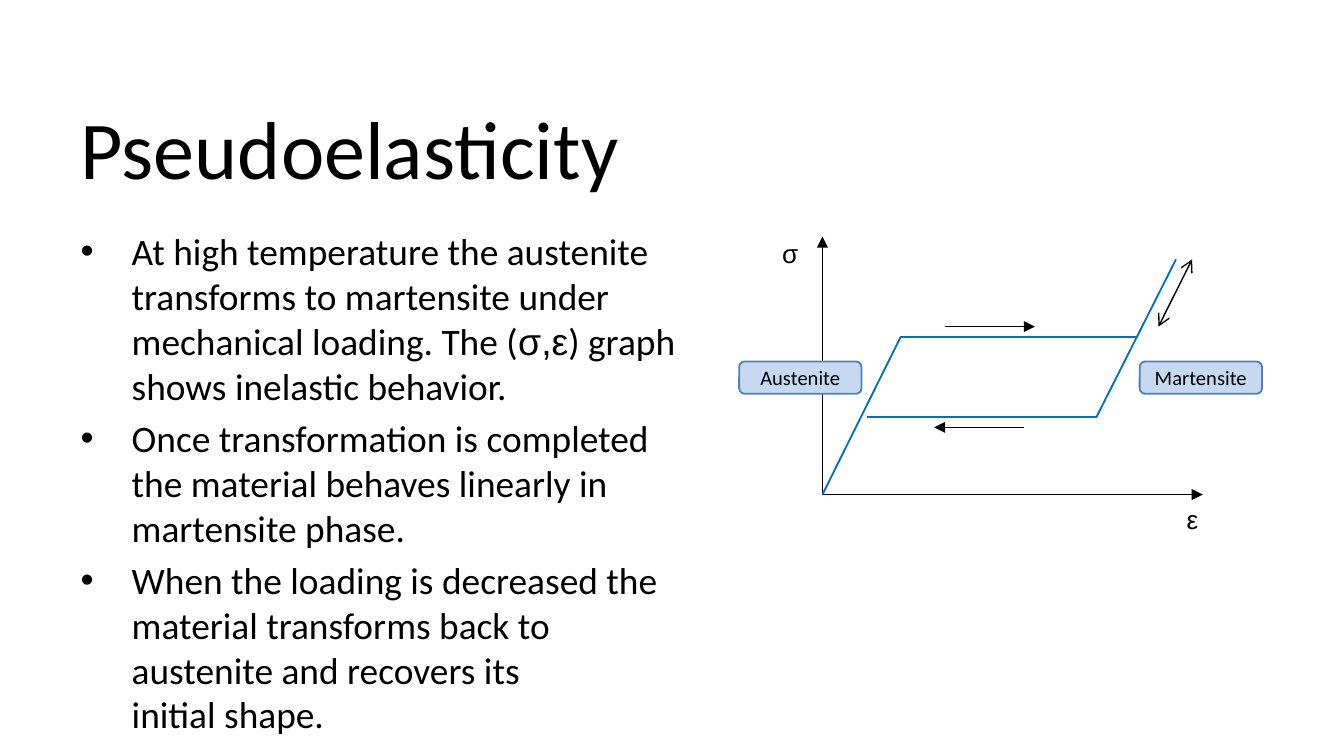
from dataclasses import dataclass

from lxml import etree
from pptx import Presentation
from pptx.dml.color import RGBColor
from pptx.enum.shapes import MSO_CONNECTOR, MSO_SHAPE
from pptx.enum.text import MSO_ANCHOR, MSO_AUTO_SIZE, PP_ALIGN
from pptx.oxml.ns import qn
from pptx.util import Inches, Pt

STRAIGHT = MSO_CONNECTOR.STRAIGHT
ROUNDED = MSO_SHAPE.ROUNDED_RECTANGLE
TOP, MIDDLE = MSO_ANCHOR.TOP, MSO_ANCHOR.MIDDLE
LEFT, CENTER = PP_ALIGN.LEFT, PP_ALIGN.CENTER
NO_AUTOFIT = MSO_AUTO_SIZE.NONE


@dataclass(frozen=True)
class Theme:
    ink: RGBColor = RGBColor(0x00, 0x00, 0x00)
    curve: RGBColor = RGBColor(0x00, 0x70, 0xC0)
    phase_fill: RGBColor = RGBColor(0xC6, 0xD9, 0xF1)
    phase_line: RGBColor = RGBColor(0x4F, 0x81, 0xBD)
    font: str = "Calibri"
    symbol_font: str = "Arial"
    title_size: float = 44
    body_size: float = 20
    symbol_size: float = 14
    phase_size: float = 11
    thin: float = 0.75
    medium: float = 1


def add_text(paragraph, text, *, size, color, font, align=LEFT):
    paragraph.alignment = align
    run = paragraph.add_run()
    run.text = text
    run.font.size = Pt(size)
    run.font.name = font
    run.font.color.rgb = color


def set_bullet(paragraph, indent):
    """Give the paragraph a round bullet with a hanging indent."""
    properties = paragraph._p.get_or_add_pPr()
    properties.set("marL", str(indent))
    properties.set("indent", str(-indent))
    etree.SubElement(properties, qn("a:buFont")).set("typeface", "Arial")
    etree.SubElement(properties, qn("a:buChar")).set("char", "•")


class SlideBuilder:
    def __init__(self, slide, theme):
        self.slide = slide
        self.theme = theme

    def _prepare(self, shape, box, anchor):
        """Place a text-bearing shape and return its text frame."""
        shape.left, shape.top, shape.width, shape.height = map(Inches, box)
        frame = shape.text_frame
        frame.word_wrap = True
        frame.auto_size = NO_AUTOFIT
        frame.vertical_anchor = anchor
        return frame

    def title(self, text, box):
        frame = self._prepare(self.slide.shapes.title, box, MIDDLE)
        add_text(frame.paragraphs[0], text, size=self.theme.title_size,
                 color=self.theme.ink, font=self.theme.font)

    def bullets(self, items, box):
        """Each item is a list of (text, font) pairs; "\\v" breaks a line."""
        frame = self._prepare(self.slide.placeholders[1], box, TOP)
        for index, item in enumerate(items):
            paragraph = frame.add_paragraph() if index else frame.paragraphs[0]
            set_bullet(paragraph, Inches(0.38))
            paragraph.space_before = Pt(4 if index else 0)
            for text, font in item:
                for part, line in enumerate(text.split("\v")):
                    if part:
                        paragraph.add_line_break()
                    add_text(paragraph, line, size=self.theme.body_size,
                             color=self.theme.ink, font=font)

    def line(self, start, end, color, width, head=None, tail=None):
        """Draw a line; head is the arrowhead at start, tail the one at end."""
        connector = self.slide.shapes.add_connector(
            STRAIGHT, *map(Inches, (*start, *end)))
        connector.line.color.rgb = color
        connector.line.width = Pt(width)
        outline = connector.line._get_or_add_ln()
        for tag, kind in (("a:headEnd", head), ("a:tailEnd", tail)):
            if kind:
                etree.SubElement(outline, qn(tag)).set("type", kind)
        etree.SubElement(connector._element.spPr, qn("a:effectLst"))

    def arrow(self, start, end, head=None, tail="triangle"):
        self.line(start, end, self.theme.ink, self.theme.thin, head, tail)

    def curve(self, *points):
        for start, end in zip(points, points[1:]):
            self.line(start, end, self.theme.curve, self.theme.medium)

    def symbol(self, text, left, top):
        box = (left, top, 0.39, 0.34)
        frame = self._prepare(
            self.slide.shapes.add_textbox(*map(Inches, box)), box, TOP)
        add_text(frame.paragraphs[0], text, size=self.theme.symbol_size,
                 color=self.theme.ink, font=self.theme.symbol_font)

    def phase(self, text, left, top):
        box = (left, top, 0.91, 0.24)
        label = self.slide.shapes.add_shape(ROUNDED, *map(Inches, box))
        label.shadow.inherit = False
        label.fill.solid()
        label.fill.fore_color.rgb = self.theme.phase_fill
        label.line.color.rgb = self.theme.phase_line
        label.line.width = Pt(self.theme.medium)
        frame = self._prepare(label, box, MIDDLE)
        add_text(frame.paragraphs[0], text, size=self.theme.phase_size,
                 color=self.theme.ink, font=self.theme.font, align=CENTER)


def draw_stress_strain(builder):
    origin = (6.12, 3.68)
    upper, lower, peak = 2.51, 3.1, 1.93

    builder.arrow(origin, (origin[0], 1.76))
    builder.arrow(origin, (8.95, origin[1]))
    builder.curve(origin, (6.7, upper), (8.45, upper))
    builder.curve((8.75, peak), (8.16, lower), (6.45, lower))
    builder.symbol("σ", 5.72, 1.72)
    builder.symbol("ε", 8.73, 3.7)

    loading, unloading = upper - 0.08, lower + 0.08
    builder.arrow((7.03, loading), (7.7, loading))
    builder.arrow((7.62, unloading), (6.95, unloading))
    builder.arrow((8.62, loading), (8.87, peak), head="arrow", tail="arrow")
    for name, left in (("Martensite", 8.48), ("Austenite", 5.5)):
        builder.phase(name, left, 2.69)


def main():
    theme = Theme()
    presentation = Presentation()
    presentation.slide_width = Inches(10)
    presentation.slide_height = Inches(10 * 9 / 16)
    slide = presentation.slides.add_slide(presentation.slide_layouts[1])
    builder = SlideBuilder(slide, theme)

    builder.title("Pseudoelasticity", (0.5, 0.62, 9, 0.94))
    builder.bullets([
        [("At high temperature the austenite transforms to martensite under "
          "mechanical loading. The (", theme.font),
         ("σ,ε", theme.symbol_font),
         (") graph shows inelastic behavior.", theme.font)],
        [("Once transformation is completed the material behaves linearly "
          "in martensite phase.", theme.font)],
        [("When the loading is decreased the material transforms back to "
          "austenite and recovers its \vinitial shape.", theme.font)],
    ], (0.5, 1.65, 4.67, 3.42))
    draw_stress_strain(builder)
    presentation.save("out.pptx")


if __name__ == "__main__":
    main()
